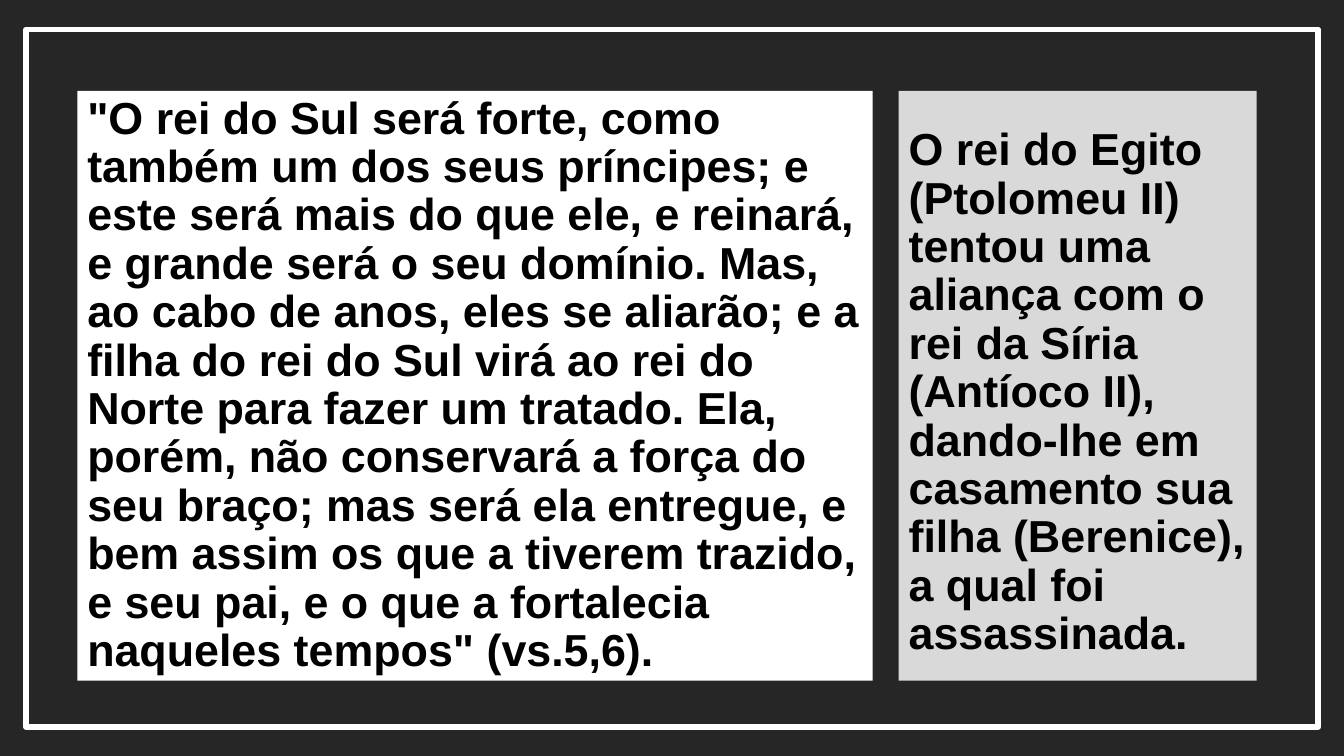
from pptx import Presentation
from pptx.dml.color import RGBColor
from pptx.enum.shapes import MSO_SHAPE
from pptx.enum.text import MSO_ANCHOR, PP_ALIGN
from pptx.util import Cm, Pt

RECT = MSO_SHAPE.RECTANGLE
MIDDLE = MSO_ANCHOR.MIDDLE
LEFT = PP_ALIGN.LEFT

COLORS = {"dark": "262626", "white": "FFFFFF", "gray": "D9D9D9", "black": "000000"}

VERSE = (
    '"O rei do Sul será forte, como também um dos seus príncipes; e este será '
    "mais do que ele, e reinará, e grande será o seu domínio. Mas, ao cabo de "
    "anos, eles se aliarão; e a filha do rei do Sul virá ao rei do Norte para "
    "fazer um tratado. Ela, porém, não conservará a força do seu braço; mas "
    "será ela entregue, e bem assim os que a tiverem trazido, e seu pai, e o "
    'que a fortalecia naqueles tempos" (vs.5,6).'
)
HISTORY = (
    "O rei do Egito (Ptolomeu II) tentou uma aliança com o rei da Síria "
    "(Antíoco II), dando-lhe em casamento sua filha (Berenice), a qual foi "
    "assassinada."
)


def color(name):
    return RGBColor.from_string(COLORS[name])


def add_rect(s, left, top, width, height, fill=None, line=None, line_width=4):
    sp = s.shapes.add_shape(RECT, Cm(left), Cm(top), Cm(width), Cm(height))
    sp.shadow.inherit = False
    if fill:
        sp.fill.solid()
        sp.fill.fore_color.rgb = color(fill)
    else:
        sp.fill.background()
    if line:
        sp.line.color.rgb = color(line)
        sp.line.width = Pt(line_width)
    else:
        sp.line.fill.background()
    return sp


def set_text(sp, text, size=32, font="Arial", ink="black", bold=True,
             spacing=0.9, inset_top=0.13):
    tf = sp.text_frame
    tf.word_wrap = True
    tf.vertical_anchor = MIDDLE
    tf.margin_top = Cm(inset_top)
    p = tf.paragraphs[0]
    p.alignment = LEFT
    p.line_spacing = spacing
    r = p.add_run()
    r.text = text
    r.font.name = font
    r.font.size = Pt(size)
    r.font.bold = bold
    r.font.color.rgb = color(ink)


def main():
    prs = Presentation()
    prs.slide_width, prs.slide_height = Cm(33.87), Cm(19.05)
    s = prs.slides.add_slide(prs.slide_layouts[6])

    add_rect(s, 0, 0, 33.87, 19.05, fill="dark")
    add_rect(s, 0.66, 0.74, 32.56, 17.58, line="white")

    panel_top, panel_height = 2.29, 14.86
    verse = add_rect(s, 1.95, panel_top, 20.04, panel_height, fill="white")
    set_text(verse, VERSE)
    history = add_rect(s, 22.65, panel_top, 9.02, panel_height, fill="gray")
    set_text(history, HISTORY, inset_top=0.5)

    prs.save("out.pptx")


if __name__ == "__main__":
    main()
